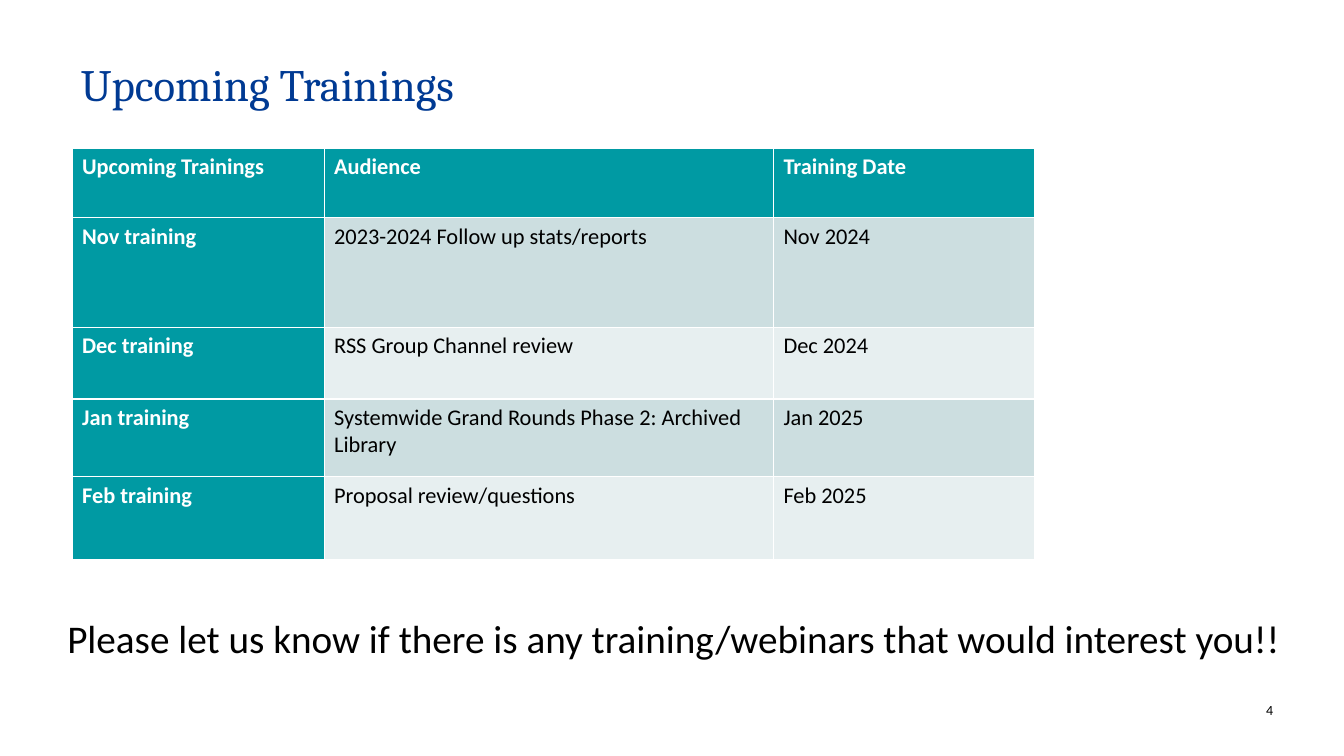
from pptx import Presentation
from pptx.dml.color import RGBColor
from pptx.enum.text import MSO_ANCHOR, MSO_AUTO_SIZE, PP_ALIGN
from pptx.util import Pt

COLORS = {
    "title": "003A93",
    "header": "009AA3",
    "band_dark": "CCDEE0",
    "band_light": "E7EFF0",
    "white": "FFFFFF",
    "black": "000000",
}
TRAININGS = [
    ("Upcoming Trainings", "Audience", "Training Date"),
    ("Nov training", "2023-2024 Follow up stats/reports", "Nov 2024"),
    ("Dec training", "RSS Group Channel review", "Dec 2024"),
    ("Jan training", "Systemwide Grand Rounds Phase 2: Archived Library", "Jan 2025"),
    ("Feb training", "Proposal review/questions", "Feb 2025"),
]
COLUMN_WIDTHS = [180, 321, 186.5]
ROW_HEIGHTS = [49.5, 78.5, 51, 55.5, 59]


def color(name):
    return RGBColor.from_string(COLORS[name])


def style(p, size, color_name, font="Calibri", bold=False):
    p.font.name = font
    p.font.size = Pt(size)
    p.font.bold = bold
    p.font.color.rgb = color(color_name)


def add_title(s, text, x, y, w, h):
    sp = s.shapes.title
    sp.left, sp.top, sp.width, sp.height = Pt(x), Pt(y), Pt(w), Pt(h)
    tf = sp.text_frame
    tf.text = text
    tf.word_wrap = True
    tf.auto_size = MSO_AUTO_SIZE.NONE
    tf.vertical_anchor = MSO_ANCHOR.TOP
    p = tf.paragraphs[0]
    p.alignment = PP_ALIGN.LEFT
    p.line_spacing = 0.9
    style(p, 32, "title", "Cambria")


def add_trainings_table(s, x, y):
    table = s.shapes.add_table(
        len(ROW_HEIGHTS), len(COLUMN_WIDTHS),
        Pt(x), Pt(y), Pt(sum(COLUMN_WIDTHS)), Pt(sum(ROW_HEIGHTS)),
    ).table
    table.first_col = True
    for column, width in zip(table.columns, COLUMN_WIDTHS):
        column.width = Pt(width)
    for row, height in zip(table.rows, ROW_HEIGHTS):
        row.height = Pt(height)
    for i, texts in enumerate(TRAININGS):
        for j, text in enumerate(texts):
            cell = table.cell(i, j)
            cell.text = text
            heading = i == 0 or j == 0
            band = "band_dark" if i % 2 else "band_light"
            cell.fill.solid()
            cell.fill.fore_color.rgb = color("header" if heading else band)
            style(cell.text_frame.paragraphs[0], 16,
                  "white" if heading else "black", bold=heading)


def add_text(s, text, x, y, w, h, size, align=PP_ALIGN.LEFT, inset=True):
    tf = s.shapes.add_textbox(Pt(x), Pt(y), Pt(w), Pt(h)).text_frame
    tf.word_wrap = True
    if not inset:
        tf.margin_left = tf.margin_right = tf.margin_top = tf.margin_bottom = 0
    tf.text = text
    p = tf.paragraphs[0]
    p.alignment = align
    style(p, size, "black")


def build_trainings_slide(prs):
    s = prs.slides.add_slide(prs.slide_layouts[5])
    add_title(s, "Upcoming Trainings", 50.5, 41, 858, 75.5)
    add_trainings_table(s, 51.5, 106)
    add_text(s, "Please let us know if there is any training/webinars that would interest you!!",
             41, 435, 901, 41, 28)
    add_text(s, "4", 882, 501, 27.5, 12, 10, PP_ALIGN.RIGHT, inset=False)


def main():
    prs = Presentation()
    prs.slide_width, prs.slide_height = Pt(960), Pt(540)
    build_trainings_slide(prs)
    prs.save("out.pptx")


if __name__ == "__main__":
    main()
